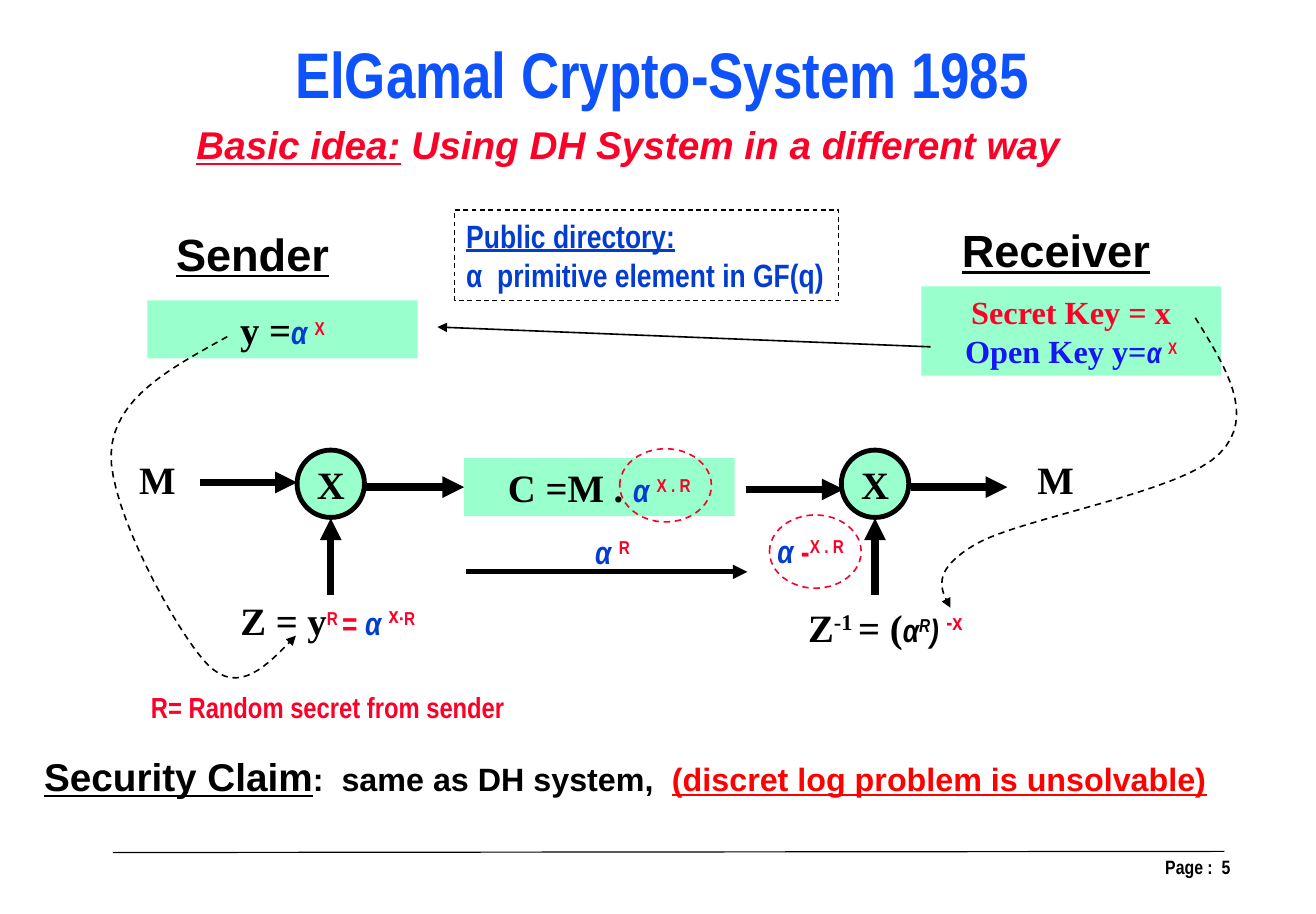
from dataclasses import dataclass

from lxml import etree
from pptx import Presentation
from pptx.dml.color import RGBColor
from pptx.enum.dml import MSO_LINE
from pptx.enum.shapes import MSO_CONNECTOR, MSO_SHAPE
from pptx.enum.text import MSO_ANCHOR, MSO_AUTO_SIZE, PP_ALIGN
from pptx.oxml.ns import qn
from pptx.util import Pt

DASH = MSO_LINE.DASH
STRAIGHT = MSO_CONNECTOR.STRAIGHT
RECT, OVAL = MSO_SHAPE.RECTANGLE, MSO_SHAPE.OVAL
TOP, MIDDLE = MSO_ANCHOR.TOP, MSO_ANCHOR.MIDDLE
FIT, FIXED = MSO_AUTO_SIZE.SHAPE_TO_FIT_TEXT, MSO_AUTO_SIZE.NONE
LEFT, CENTER, RIGHT = PP_ALIGN.LEFT, PP_ALIGN.CENTER, PP_ALIGN.RIGHT
LEFT_SIDE = 1


@dataclass(frozen=True)
class Theme:
    sans: str = "Arial"
    narrow: str = "Arial Narrow"
    serif: str = "Times New Roman"
    black: str = "000000"
    title_blue: str = "0E52FC"
    key_blue: str = "1515F5"
    alpha_blue: str = "023DD0"
    red: str = "FC0128"
    alert: str = "FF0000"
    mint: str = "99FFCC"
    title: int = 40
    role: int = 28
    large: int = 24
    medium: int = 20
    small: int = 18
    footer: int = 12


THEME = Theme()


@dataclass(frozen=True)
class Span:
    text: str
    font: str = THEME.serif
    size: int = THEME.large
    color: str = THEME.black
    italic: bool = False
    underline: bool = False
    raised: bool = False


def narrow(text, color=THEME.red, size=THEME.medium, **style):
    return Span(text, THEME.narrow, size, color, **style)


def sans(text, size=THEME.large, color=THEME.black, **style):
    return Span(text, THEME.sans, size, color, **style)


def alpha(color=THEME.alpha_blue, size=THEME.medium):
    return narrow("α ", color, size, italic=True)


def exponent(text, size=THEME.medium):
    return narrow(text, size=size, raised=True)


class Diagram:
    def __init__(self, slide, theme):
        self.slide = slide
        self.theme = theme

    def set_text(self, holder, paragraphs, align=CENTER, anchor=MIDDLE,
                 wrap=False, fit=FIT, inset=(7.2, 3.6), gap=0):
        frame = holder.text_frame
        frame.word_wrap = wrap
        frame.auto_size = fit
        frame.vertical_anchor = anchor
        frame.margin_left = frame.margin_right = Pt(inset[0])
        frame.margin_top = frame.margin_bottom = Pt(inset[1])
        for index, spans in enumerate(paragraphs):
            paragraph = frame.add_paragraph() if index else frame.paragraphs[0]
            paragraph.alignment = align
            paragraph.space_before = Pt(gap if index else 0)
            for span in spans:
                run = paragraph.add_run()
                run.text = span.text
                font = run.font
                font.name, font.size, font.bold = span.font, Pt(span.size), True
                font.italic, font.underline = span.italic, span.underline
                font.color.rgb = RGBColor.from_string(span.color)
                if span.raised:
                    run._r.get_or_add_rPr().set("baseline", "30000")

    def title(self, box, spans):
        heading = self.slide.shapes.title
        heading.left, heading.top, heading.width, heading.height = map(Pt, box)
        self.set_text(heading, [spans], anchor=TOP)

    def text(self, box, *paragraphs, **layout):
        self.set_text(self.slide.shapes.add_textbox(*map(Pt, box)), paragraphs, **layout)

    def stroke(self, line, color, width, dashed=False, arrow=False):
        line.color.rgb = RGBColor.from_string(color)
        line.width = Pt(width)
        if dashed:
            line.dash_style = DASH
        if arrow:
            etree.SubElement(line._get_or_add_ln(), qn("a:tailEnd"), type="triangle")

    def shape(self, kind, box, *paragraphs, fill=None, outline=None, width=1,
              dashed=False, **layout):
        shape = self.slide.shapes.add_shape(kind, *map(Pt, box))
        shape.shadow.inherit = False
        if fill:
            shape.fill.solid()
            shape.fill.fore_color.rgb = RGBColor.from_string(fill)
        else:
            shape.fill.background()
        if outline:
            self.stroke(shape.line, outline, width, dashed)
        else:
            shape.line.fill.background()
        if paragraphs:
            self.set_text(shape, paragraphs, **layout)
        return shape

    def line(self, start, end, width, arrow=True):
        connector = self.slide.shapes.add_connector(STRAIGHT, *map(Pt, start + end))
        self.stroke(connector.line, self.theme.black, width, arrow=arrow)
        etree.SubElement(connector._element.spPr, qn("a:effectLst"))
        return connector

    def curve(self, start, *segments, steps=16):
        points, origin = [], start
        for first, second, end in segments:
            for step in range(1, steps + 1):
                t = step / steps
                weights = ((1 - t) ** 3, 3 * t * (1 - t) ** 2, 3 * t * t * (1 - t), t ** 3)
                corners = (origin, first, second, end)
                points.append(tuple(
                    Pt(sum(w * corner[axis] for w, corner in zip(weights, corners)))
                    for axis in (0, 1)))
            origin = end
        builder = self.slide.shapes.build_freeform(Pt(start[0]), Pt(start[1]))
        builder.add_line_segments(points, close=False)
        bend = builder.convert_to_shape()
        bend.shadow.inherit = False
        bend.fill.background()
        self.stroke(bend.line, self.theme.black, 1, dashed=True, arrow=True)


def main():
    deck = Presentation()
    deck.slide_width, deck.slide_height = Pt(816.48), Pt(567.36)
    t = THEME
    d = Diagram(deck.slides.add_slide(deck.slide_layouts[5]), t)

    d.text((586, 526.3, 186, 37), [narrow("Page :  5", t.black, t.footer)],
           align=RIGHT, anchor=TOP, wrap=True, inset=(8.6, 4.3))
    d.line((70, 529.2), (759.6, 528.5), 0.75, arrow=False)
    d.title((175.7, 17.3, 470, 55.4),
            [narrow("ElGamal Crypto-System 1985", t.title_blue, t.title)])
    d.text((105, 71.3, 569.5, 36.7),
           [sans("Basic idea:", color=t.red, italic=True, underline=True),
            sans(" Using DH System in a different way", color=t.red, italic=True)])

    for role, left, top, width in (("Sender", 102.2, 136.8, 109.4),
                                   ("Receiver", 589.7, 134.6, 131)):
        d.text((left, top, width, 41), [sans(role, t.role, underline=True)],
               align=LEFT, anchor=TOP)

    for circle_left, message_left in ((184.3, 79.2), (522, 636.5)):
        middle = circle_left + 20.9
        d.shape(OVAL, (circle_left, 279.4, 41.8, 41.8), [Span("X")],
                fill=t.mint, outline=t.black, width=3, fit=FIXED)
        d.line((middle, 369.4), (middle, 321.8), 4.5)
        d.text((message_left, 279.4, 36.7, 36), [Span("M")])

    cipher = d.shape(RECT, (288, 284.4, 167.8, 36),
                     [Span("C =M . "), alpha(), exponent("X . R")],
                     fill=t.mint, wrap=True)
    d.shape(RECT, (91.4, 186.5, 167.8, 36), [Span("y ="), alpha(), exponent("X")],
            fill=t.mint, wrap=True)
    d.shape(RECT, (571.7, 177.8, 185.8, 55.4),
            [Span("Secret Key = x", size=t.medium, color=t.red)],
            [Span("Open Key y=", size=t.medium, color=t.key_blue),
             alpha(t.key_blue, t.small), exponent("X", t.small)],
            fill=t.mint, wrap=True)

    d.line((123.8, 299.5), (184.3, 299.5), 4.5)
    to_cipher = d.line((226.8, 302.4), (288, 302.4), 4.5)
    to_cipher.end_connect(cipher, LEFT_SIDE)
    d.line((463, 303.8), (523.4, 303.8), 4.5)
    d.line((565.2, 302.4), (625, 302.4), 4.5)
    d.line((289.4, 355), (463.7, 355), 3)
    d.line((577.4, 215.3), (271.4, 203), 1)

    d.text((362.2, 326.9, 38.9, 55.4), [alpha(), exponent("R")],
           align=LEFT, anchor=TOP)
    d.text((475.2, 326.2, 61.2, 31.7), [alpha(), narrow("-"), exponent("X . R")],
           align=LEFT, anchor=TOP)
    d.text((84.2, 365.8, 238.3, 88.6),
           [Span("Z = y"), exponent("R "), narrow("= "), alpha(),
            exponent("x", t.large), exponent("·R")],
           [narrow("R= Random secret from sender", size=t.small)], gap=29)
    d.text((489.6, 370.8, 119.5, 36.7),
           [Span("Z"), Span("-1 ", raised=True), Span("= ("),
            narrow("α", t.black, italic=True),
            narrow("R", t.black, italic=True, raised=True),
            narrow(") ", t.black, italic=True), exponent("-x", t.large)])

    d.curve((141, 209),
            ((106, 228.5), (70.6, 247), (69, 281)),
            ((67, 314.6), (110.2, 393.8), (128.9, 412.6)),
            ((148.3, 432), (165.6, 413.3), (183.6, 394.6)))
    d.curve((741.6, 197.3),
            ((760.3, 227.5), (779.8, 258.5), (756.7, 281.5)),
            ((734.4, 305.3), (632.9, 321.8), (605.5, 337.7)),
            ((577.4, 354.2), (583.2, 365.8), (589.7, 377.3)))

    d.shape(RECT, (282.2, 130.3, 238.3, 56.2),
            [narrow("Public directory:", t.alpha_blue, underline=True)],
            [narrow("α  primitive element in GF(q)", t.alpha_blue)],
            outline=t.black, width=0.75, dashed=True, align=LEFT)
    for left, top in ((384.5, 278.6), (477.4, 319.7)):
        d.shape(OVAL, (left, top, 56.9, 45.4), outline=t.red, dashed=True)

    d.text((27.4, 467.3, 726.5, 28.8),
           [sans("Security Claim", underline=True),
            sans(":  same as DH system,  ", t.medium),
            sans("(discret log problem is unsolvable)", t.medium, t.alert, underline=True)],
           align=LEFT, anchor=TOP, inset=(0, 0))
    deck.save("out.pptx")


if __name__ == "__main__":
    main()
